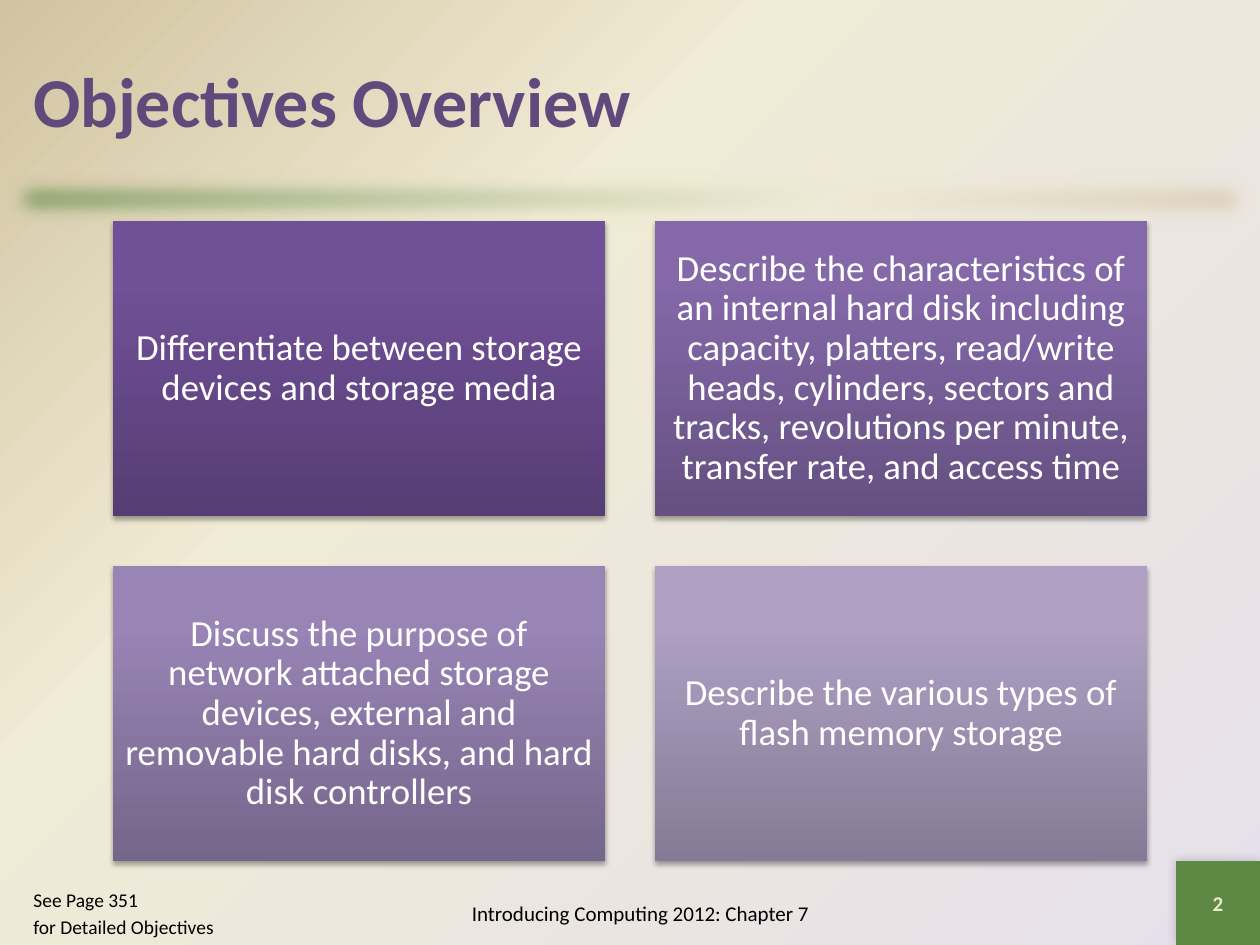
from lxml.etree import SubElement
from pptx import Presentation
from pptx.dml.color import RGBColor
from pptx.enum.shapes import MSO_SHAPE as Shape
from pptx.enum.text import MSO_ANCHOR as Anchor, PP_ALIGN as Align
from pptx.oxml.ns import qn
from pptx.util import Emu, Pt

COLORS = {
    "green": "5E8945", "cream": "F0EBD5", "tan": "D1C39F", "lavender": "E6E0EC",
    "title": "604A7B", "number": "EEEBCA", "white": "FFFFFF", "black": "000000",
}
OBJECTIVES = [
    ("Differentiate between storage devices and storage media",
     ("563D74", "705097", "704F99")),
    ("Describe the characteristics of an internal hard disk including capacity, "
     "platters, read/write heads, cylinders, sectors and tracks, revolutions per "
     "minute, transfer rate, and access time",
     ("655081", "8468A8", "8467AA")),
    ("Discuss the purpose of network attached storage devices, external and "
     "removable hard disks, and hard disk controllers",
     ("75668B", "9884B5", "9984B7")),
    ("Describe the various types of flash memory storage",
     ("867B96", "AE9FC3", "AE9FC4")),
]


def px(count):
    return Emu(round(count * 914400 / 126))


def apply(target, values):
    for name, value in values.items():
        setattr(target, name, value)


def add_node(parent, tag, **attributes):
    values = {name: str(value) for name, value in attributes.items()}
    return SubElement(parent, qn(tag), values)


class SlideBuilder:
    font = "Calibri"

    def __init__(self, page):
        self.page = page

    def gradient(self, owner, fill, colors, middle, angle=None):
        """Fill with three stops; without an angle it spreads from bottom right."""
        fill.gradient()
        node = owner.find(".//" + qn("a:gradFill"))
        for child in list(node):
            node.remove(child)
        stops = add_node(node, "a:gsLst")
        for place, color in zip((0, middle, 100), colors):
            stop = add_node(stops, "a:gs", pos=place * 1000)
            add_node(stop, "a:srgbClr", val=color)
        if angle is None:
            spread = add_node(node, "a:path", path="circle")
            add_node(spread, "a:fillToRect", l=100000, t=100000, r=0, b=0)
        else:
            add_node(node, "a:lin", ang=angle * 60000, scaled=0)

    def background(self, colors):
        self.gradient(self.page._element, self.page.background.fill, colors, 65)

    def rectangle(self, *frame):
        box = self.page.shapes.add_shape(Shape.RECTANGLE, *map(px, frame))
        box.shadow.inherit = False
        box.line.fill.background()
        return box

    def effect(self, box, tag, **attributes):
        effects = box._element.spPr.find(qn("a:effectLst"))
        return add_node(effects, tag, **attributes)

    def shadow(self, box, opacity, blur, distance, angle):
        node = self.effect(box, "a:outerShdw", blurRad=Pt(blur), dist=Pt(distance),
                           dir=angle * 60000, algn="ctr", rotWithShape=0)
        color = add_node(node, "a:srgbClr", val=COLORS["black"])
        add_node(color, "a:alpha", val=opacity * 1000)

    def fill_text(self, box, lines, size, color, bold=False, anchor=Anchor.MIDDLE,
                  **para_format):
        frame = box.text_frame
        apply(frame, {"word_wrap": True, "vertical_anchor": anchor})
        for index, line in enumerate(lines):
            para = frame.add_paragraph() if index else frame.paragraphs[0]
            apply(para, para_format)
            span = para.add_run()
            span.text = line
            apply(span.font, {"name": self.font, "size": Pt(size), "bold": bold})
            span.font.color.rgb = RGBColor.from_string(COLORS[color])

    def text(self, frame, lines, size, color, **options):
        box = self.page.shapes.add_textbox(*map(px, frame))
        self.fill_text(box, lines, size, color, **options)

    def soft_bar(self, frame, colors):
        bar = self.rectangle(*frame)
        self.gradient(bar._element, bar.fill, colors, 65, 45)
        self.effect(bar, "a:softEdge", rad=Pt(12.5))

    def number_tile(self, frame, number):
        tile = self.rectangle(*frame)
        tile.fill.solid()
        tile.fill.fore_color.rgb = RGBColor.from_string(COLORS["green"])
        self.shadow(tile, 20, 6, 0, 225)
        self.fill_text(tile, [number], 12, "number", bold=True,
                       alignment=Align.CENTER)

    def objective(self, frame, label, colors):
        card = self.rectangle(*frame)
        self.gradient(card._element, card.fill, colors, 80, 270)
        self.shadow(card, 35, 3.1, 1.8, 90)
        margins = ("margin_left", "margin_top", "margin_right", "margin_bottom")
        apply(card.text_frame, dict.fromkeys(margins, px(11)))
        self.fill_text(card, [label], 21, "white", alignment=Align.CENTER,
                       line_spacing=0.9)


def main():
    deck = Presentation()
    apply(deck, {"slide_width": px(1260), "slide_height": px(945)})
    builder = SlideBuilder(deck.slides.add_slide(deck.slide_layouts[6]))

    builder.background([COLORS[name] for name in ("lavender", "cream", "tan")])
    builder.soft_bar((0, 168, 1260, 63),
                     [COLORS[name] for name in ("green", "cream", "tan")])
    builder.number_tile((1176, 861, 84, 84), "2")
    builder.text((21, 21, 1218, 158), ["Objectives Overview"], 40, "title", bold=True)

    for index, (label, colors) in enumerate(OBJECTIVES):
        row, column = divmod(index, 2)
        frame = (113 + column * 542, 221 + row * 345, 492, 295)
        builder.objective(frame, label, colors)

    builder.text((378, 882, 525, 63), ["Introducing Computing 2012: Chapter 7"],
                 12, "black", alignment=Align.CENTER)
    builder.text((21, 882, 231, 63), ["See Page 351", "for Detailed Objectives"],
                 11.1, "black", anchor=Anchor.TOP, space_before=Pt(2.2))
    deck.save("out.pptx")


if __name__ == "__main__":
    main()
